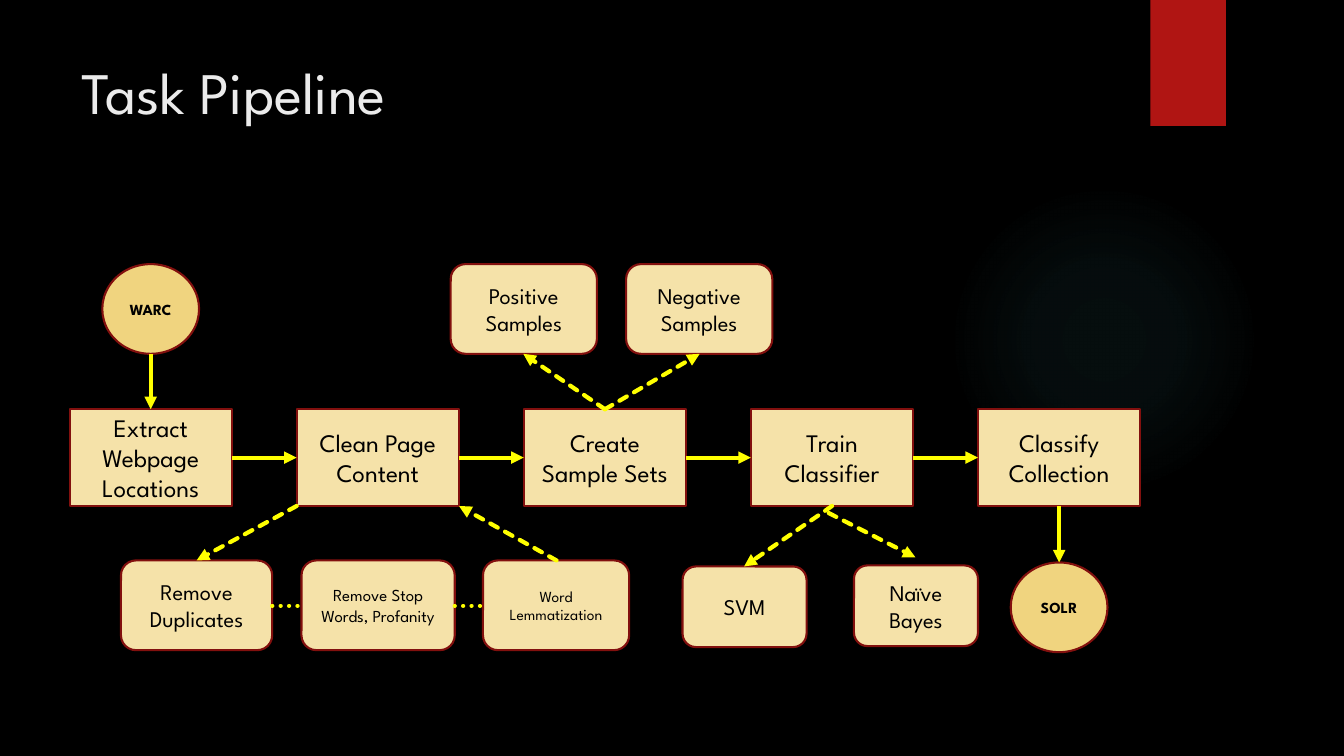
from lxml.etree import SubElement
from pptx import Presentation
from pptx.dml.color import RGBColor
from pptx.enum.dml import MSO_LINE
from pptx.enum.shapes import MSO_CONNECTOR, MSO_SHAPE
from pptx.enum.text import MSO_ANCHOR, PP_ALIGN
from pptx.oxml import parse_xml
from pptx.oxml.ns import nsdecls, qn
from pptx.util import Inches, Pt

FONT = "League Spartan"
COLORS = {
    "background": "000000", "title": "EBEBEB", "text": "000000",
    "accent": "B01513", "outline": "82100E", "box": "F5E2A9",
    "endpoint": "F0D47F", "arrow": "FFFF00", "glow": "50B9C1",
}


def add_node(kind, left, top, width, height, text, size, fill="box", bold=False):
    shape = slide.shapes.add_shape(
        kind, Inches(left), Inches(top), Inches(width), Inches(height))
    shape.shadow.inherit = False
    shape.fill.solid()
    shape.fill.fore_color.rgb = RGBColor.from_string(COLORS[fill])
    shape.line.color.rgb = RGBColor.from_string(COLORS["outline"])
    shape.line.width = Pt(1.5)
    text_frame = shape.text_frame
    text_frame.word_wrap = True
    text_frame.vertical_anchor = MSO_ANCHOR.MIDDLE
    paragraph = text_frame.paragraphs[0]
    paragraph.alignment = PP_ALIGN.CENTER
    run = paragraph.add_run()
    run.text = text
    run.font.name = FONT
    run.font.size = Pt(size)
    run.font.bold = bold
    run.font.color.rgb = RGBColor.from_string(COLORS["text"])


def add_link(start_x, start_y, end_x, end_y, dash=None, arrow=True):
    connector = slide.shapes.add_connector(
        MSO_CONNECTOR.STRAIGHT, Inches(start_x), Inches(start_y),
        Inches(end_x), Inches(end_y))
    connector.line.color.rgb = RGBColor.from_string(COLORS["arrow"])
    connector.line.width = Pt(3)
    line = connector.line._get_or_add_ln()
    if dash:
        connector.line.dash_style = dash
        line.set("cap", "rnd")
    if arrow:
        SubElement(line, qn("a:tailEnd"), type="triangle")
    SubElement(connector._element.spPr, qn("a:effectLst"))


presentation = Presentation()
presentation.slide_width = Inches(13.33)
presentation.slide_height = Inches(7.5)
slide = presentation.slides.add_slide(presentation.slide_layouts[5])
slide.background.fill.solid()
slide.background.fill.fore_color.rgb = RGBColor.from_string(COLORS["background"])

# Soft glow with a radial fade
glow = slide.shapes.add_shape(
    MSO_SHAPE.OVAL, Inches(9.41), Inches(1.83), Inches(3.08), Inches(3.08))
glow.shadow.inherit = False
glow.line.fill.background()
stops = "".join(
    f'<a:gs pos="{position}000"><a:srgbClr val="{COLORS["glow"]}">'
    f'<a:alpha val="{alpha}000"/></a:srgbClr></a:gs>'
    for position, alpha in ((0, 7), (36, 6), (69, 0)))
gradient = parse_xml(
    f'<a:gradFill {nsdecls("a")} rotWithShape="1"><a:gsLst>{stops}</a:gsLst>'
    '<a:path path="circle"><a:fillToRect l="50000" t="50000" r="50000" b="50000"/>'
    '</a:path></a:gradFill>')
glow._element.spPr.find(qn("a:prstGeom")).addnext(gradient)

# Red tab at the top edge
tab = slide.shapes.add_shape(
    MSO_SHAPE.RECTANGLE, Inches(11.41), 0, Inches(0.75), Inches(1.25))
tab.shadow.inherit = False
tab.fill.solid()
tab.fill.fore_color.rgb = RGBColor.from_string(COLORS["accent"])
tab.line.fill.background()

# Title
title = slide.shapes.title
title.left, title.top = Inches(0.71), Inches(0.5)
title.width, title.height = Inches(10.29), Inches(1.53)
title.text_frame.vertical_anchor = MSO_ANCHOR.TOP
paragraph = title.text_frame.paragraphs[0]
paragraph.alignment = PP_ALIGN.LEFT
run = paragraph.add_run()
run.text = "Task Pipeline"
run.font.name = FONT
run.font.size = Pt(42)
run.font.color.rgb = RGBColor.from_string(COLORS["title"])

# Main steps, joined left to right
STEP_TOP, STEP_WIDTH, STEP_HEIGHT = 4.06, 1.61, 0.96
STEP_BOTTOM = STEP_TOP + STEP_HEIGHT
STEP_MIDDLE = STEP_TOP + STEP_HEIGHT / 2
steps = ["Extract Webpage Locations", "Clean Page Content", "Create Sample Sets",
         "Train Classifier", "Classify Collection"]
step_lefts = [0.69 + (9.7 - 0.69) / 4 * index for index in range(len(steps))]
step_centers = [left + STEP_WIDTH / 2 for left in step_lefts]
for left, text in zip(step_lefts, steps):
    add_node(MSO_SHAPE.RECTANGLE, left, STEP_TOP, STEP_WIDTH, STEP_HEIGHT, text, 18)
for left, next_left in zip(step_lefts, step_lefts[1:]):
    add_link(left + STEP_WIDTH, STEP_MIDDLE, next_left, STEP_MIDDLE)

# Input and output circles
UPPER_TOP, NODE_HEIGHT = 2.62, 0.89
UPPER_BOTTOM = UPPER_TOP + NODE_HEIGHT
for center, top, text in ((step_centers[0], UPPER_TOP, "WARC"),
                          (step_centers[4], 5.58, "SOLR")):
    add_node(MSO_SHAPE.OVAL, center - 0.48, top, 0.96, NODE_HEIGHT, text, 11,
             "endpoint", True)
add_link(step_centers[0], UPPER_BOTTOM, step_centers[0], STEP_TOP)
add_link(step_centers[4], STEP_BOTTOM, step_centers[4], 5.58)

# Details of the steps
LOWER_TOP = 5.56
details = [
    (1.2, LOWER_TOP, 1.5, NODE_HEIGHT, "Remove Duplicates", 16),
    (2.99, LOWER_TOP, 1.52, NODE_HEIGHT, "Remove Stop Words, Profanity", 12),
    (4.79, LOWER_TOP, 1.45, NODE_HEIGHT, "Word Lemmatization", 11),
    (4.47, UPPER_TOP, 1.45, NODE_HEIGHT, "Positive Samples", 16),
    (6.21, UPPER_TOP, 1.45, NODE_HEIGHT, "Negative Samples", 16),
    (6.77, 5.62, 1.23, 0.8, "SVM", 16),
    (8.47, 5.61, 1.23, 0.8, "Naïve Bayes", 16),
]
for detail in details:
    add_node(MSO_SHAPE.ROUNDED_RECTANGLE, *detail)

# Dashed arrows between steps and details
dashed_links = [
    (step_lefts[1], STEP_BOTTOM, 1.95, LOWER_TOP),
    (5.52, LOWER_TOP, step_lefts[1] + STEP_WIDTH, STEP_BOTTOM),
    (step_centers[2], STEP_TOP, 5.19, UPPER_BOTTOM),
    (step_centers[2], STEP_TOP, 6.94, UPPER_BOTTOM),
    (step_centers[3], STEP_BOTTOM, 7.38, 5.62),
    (8.22, 5.09, 9.08, 5.53),
]
for link in dashed_links:
    add_link(*link, dash=MSO_LINE.SQUARE_DOT)

# Dotted joins along the cleaning details
for start_x, end_x in ((2.7, 2.99), (4.51, 4.79)):
    add_link(start_x, 6.01, end_x, 6.01, dash=MSO_LINE.ROUND_DOT, arrow=False)

presentation.save("out.pptx")
